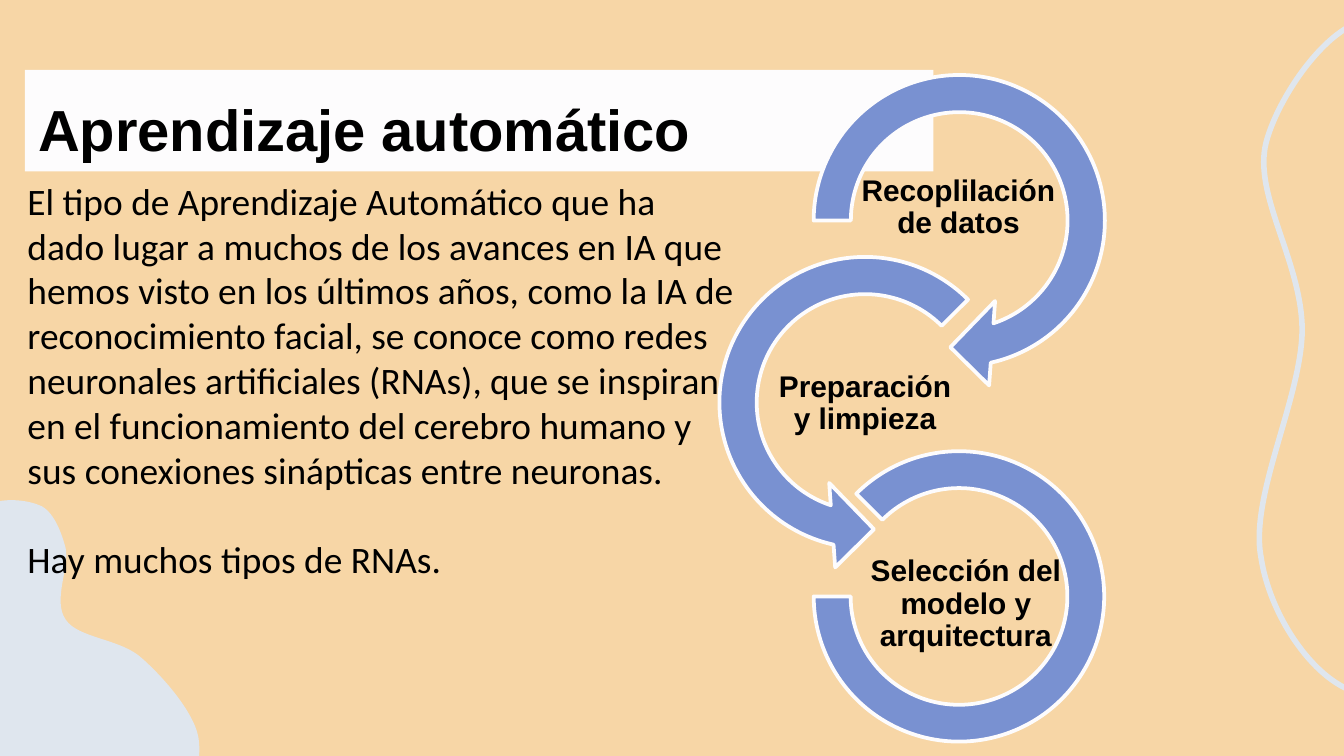
"""Build the slide on machine learning, with its cycle of three steps."""
import lxml.etree
import pptx
import pptx.dml.color
import pptx.enum.shapes
import pptx.enum.text
import pptx.oxml.ns
import pptx.util

Cm = pptx.util.Cm
Pt = pptx.util.Pt
SHAPES = pptx.enum.shapes.MSO_SHAPE
ANCHOR = pptx.enum.text.MSO_ANCHOR
ALIGN = pptx.enum.text.PP_ALIGN

COLOURS = {"sand": "F7D6A6", "mist": "DFE6EE", "white": "FDFCFD", "blue": "7991D1", "ink": "000000"}

TITLE = "Aprendizaje automático"
BODY = [
    "El tipo de Aprendizaje Automático que ha dado lugar a muchos de los avances en IA que hemos visto "
    "en los últimos años, como la IA de reconocimiento facial, se conoce como redes neuronales "
    "artificiales (RNAs), que se inspiran en el funcionamiento del cerebro humano y sus conexiones "
    "sinápticas entre neuronas.",
    "Hay muchos tipos de RNAs.",
]
STEPS = [
    {"text": "Recoplilación de datos", "shape": SHAPES.CIRCULAR_ARROW,
     "ring": (14.93, 0.97, 6.4, 6.4), "adjust": (0.11, 11.42, 45, 108, 0.125),
     "label": (15.88, 3.04, 4.47, 1.78), "bottom": 0.03},
    {"text": "Preparación y limpieza", "shape": SHAPES.LEFT_CIRCULAR_ARROW,
     "ring": (13.15, 4.41, 6.4, 6.4), "adjust": (0.11, 11.42, 63, 189, 0.125),
     "label": (14.57, 6.75, 3.56, 1.78), "bottom": 0.03},
    {"text": "Selección del modelo y arquitectura", "shape": SHAPES.BLOCK_ARC,
     "ring": (15.38, 8.53, 5.49, 5.49), "adjust": (135, 108, 0.127),
     "label": (16.03, 10.36, 4.45, 2.92), "bottom": 0.82},
]
BLOB = [
    (2.87, 15.37),
    (3.61, 15.24), (3.81, 14.5), (3.76, 14.02),
    (3.73, 13.54), (3.12, 12.83), (2.69, 12.45),
    (2.29, 12.07), (1.47, 12.07), (1.24, 11.71),
    (0.99, 11.35), (1.32, 10.72), (1.24, 10.36),
    (1.14, 9.98), (0.97, 9.6), (0.69, 9.53),
    (0.38, 9.42), (-0.28, 9.37), (-0.51, 9.8),
    (-0.74, 10.21), (-0.71, 11.15), (-0.74, 11.99),
    (-0.76, 12.83), (-1.22, 14.25), (-0.61, 14.81),
    (-0.03, 15.37), (2.13, 15.49), (2.87, 15.37),
]
WAVE = [
    (26.19, 0.41),
    (25.35, 0.08), (24.18, 1.73), (23.93, 2.69),
    (23.67, 3.68), (24.61, 4.95), (24.61, 6.25),
    (24.59, 7.54), (23.62, 9.37), (23.83, 10.52),
    (24, 11.68), (24.89, 12.95), (25.73, 13.11),
    (26.57, 13.26), (28.35, 12.83), (28.88, 11.43),
    (29.41, 10.03), (29.34, 6.5), (28.88, 4.67),
    (28.42, 2.84), (27, 0.71), (26.19, 0.41),
]


def colour(name):
    return pptx.dml.color.RGBColor.from_string(COLOURS[name])


def apply(target, values):
    for name, value in values.items():
        setattr(target, name, value)


def paint(shape, fill=None, line=None, width=0):
    shape.shadow.inherit = False
    for part, name in ((shape.fill, fill), (shape.line.fill, line)):
        if name:
            part.solid()
            part.fore_color.rgb = colour(name)
        else:
            part.background()
    if line:
        shape.line.width = Pt(width)


def curve_points(nodes, steps=16):
    points = [nodes[0]]
    for start in range(0, len(nodes) - 1, 3):
        for step in range(1, steps + 1):
            t = step / steps
            weights = ((1 - t) ** 3, 3 * t * (1 - t) ** 2, 3 * t * t * (1 - t), t ** 3)
            segment = nodes[start:start + 4]
            points.append(tuple(sum(w * node[axis] for w, node in zip(weights, segment)) for axis in (0, 1)))
    return [(Cm(x), Cm(y)) for x, y in points]


def add_outline(page, nodes, **style):
    """Fit the frame to the curve, then draw it with cubic segments."""
    first, *rest = curve_points(nodes)
    builder = page.shapes.build_freeform(*first)
    builder.add_line_segments(rest, close=True)
    shape = builder.convert_to_shape()
    qn = pptx.oxml.ns.qn
    outline = next(shape._element.iter(qn("a:path")))
    for child in list(outline):
        outline.remove(child)
    groups = [("a:moveTo", nodes[:1])]
    groups += [("a:cubicBezTo", nodes[start:start + 3]) for start in range(1, len(nodes), 3)]
    for tag, points in groups:
        command = lxml.etree.SubElement(outline, qn(tag))
        for x, y in points:
            lxml.etree.SubElement(command, qn("a:pt"), x=str(Cm(x) - shape.left), y=str(Cm(y) - shape.top))
    lxml.etree.SubElement(outline, qn("a:close"))
    paint(shape, **style)


def add_text(page, place, texts, frame_format, para_format, font_format, gap=0):
    box = page.shapes.add_textbox(*map(Cm, place))
    frame = box.text_frame
    apply(frame, {"word_wrap": True, **frame_format})
    for index, text in enumerate(texts):
        para = frame.add_paragraph() if index else frame.paragraphs[0]
        apply(para, para_format)
        if index:
            para.space_before = Pt(gap)
        span = para.add_run()
        span.text = text
        apply(span.font, font_format)
        span.font.color.rgb = colour("ink")
    return box


def margins(side, bottom=None):
    values = {f"margin_{name}": Cm(side) for name in ("left", "top", "right")}
    return {**values, "margin_bottom": Cm(side if bottom is None else bottom)}


def main():
    deck = pptx.Presentation()
    apply(deck, {"slide_width": Cm(25.4), "slide_height": Cm(14.29)})
    page = deck.slides.add_slide(deck.slide_layouts[6])
    page.background.fill.solid()
    page.background.fill.fore_color.rgb = colour("sand")

    add_outline(page, BLOB, fill="mist")
    add_outline(page, WAVE, line="mist", width=3)

    title = add_text(page, (0.47, 1.32, 17.17, 1.92), [TITLE],
                     {"vertical_anchor": ANCHOR.TOP, **margins(0.25)},
                     {"line_spacing": 1.15}, {"name": "Arial", "size": Pt(31), "bold": True})
    paint(title, fill="white")

    for step in STEPS:
        ring = page.shapes.add_shape(step["shape"], *map(Cm, step["ring"]))
        for index, value in enumerate(step["adjust"]):
            ring.adjustments[index] = value
        paint(ring, fill="blue", line="white", width=2)
        add_text(page, step["label"], [step["text"]],
                 {"vertical_anchor": ANCHOR.MIDDLE, **margins(0.03, step["bottom"])},
                 {"alignment": ALIGN.CENTER, "line_spacing": 0.9},
                 {"name": "Arial", "size": Pt(16), "bold": True})

    add_text(page, (0.27, 3.24, 13.87, 8.81), BODY,
             {"auto_size": pptx.enum.text.MSO_AUTO_SIZE.SHAPE_TO_FIT_TEXT}, {},
             {"name": "Calibri", "size": Pt(20)}, gap=24)
    deck.save("out.pptx")


if __name__ == "__main__":
    main()
